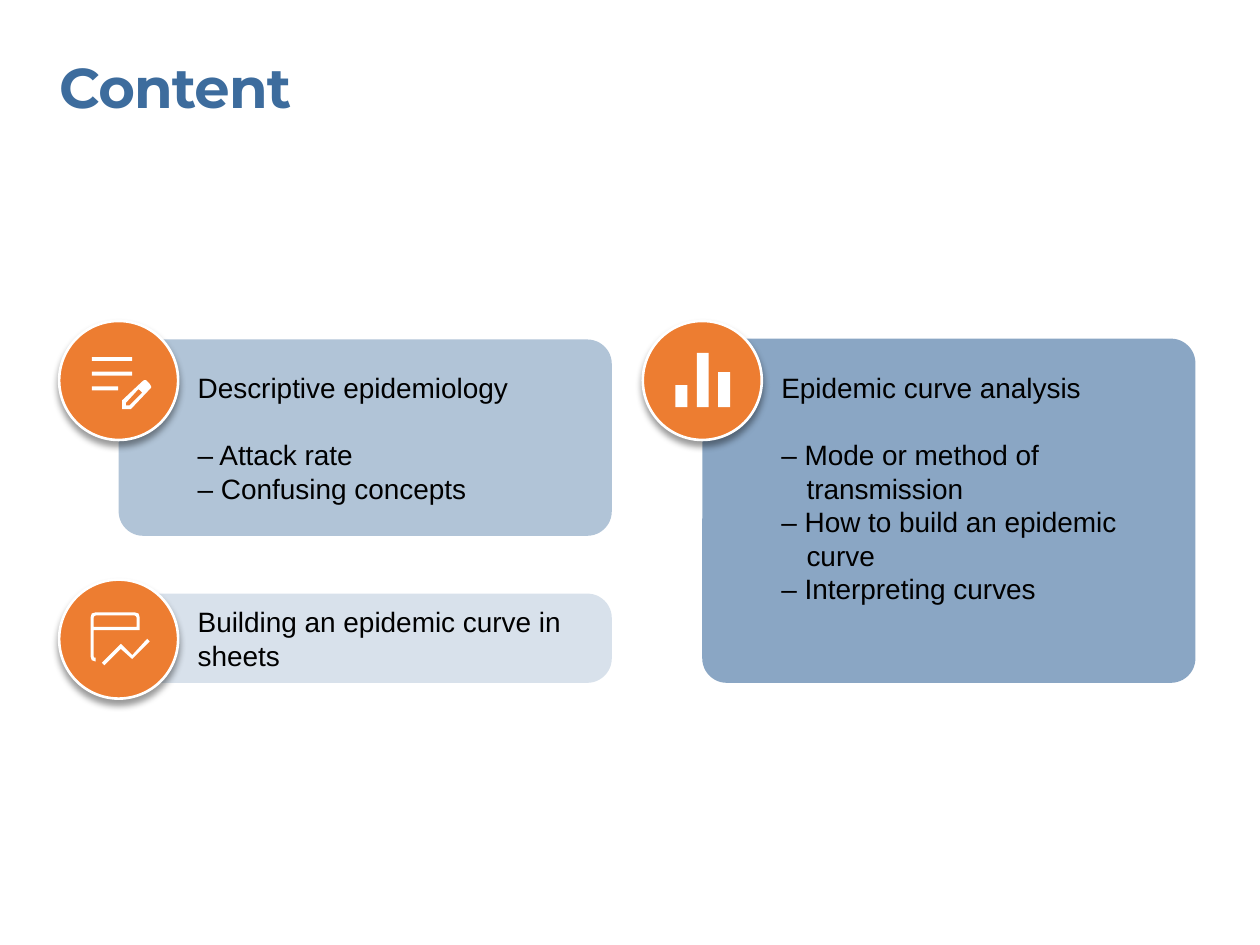
import dataclasses

import pptx
import pptx.dml.color
import pptx.enum.shapes
import pptx.enum.text
import pptx.oxml
import pptx.oxml.ns
import pptx.util

Pt = pptx.util.Pt
RGB = pptx.dml.color.RGBColor.from_string
SHAPES = pptx.enum.shapes.MSO_SHAPE


@dataclasses.dataclass(frozen=True)
class Theme:
    blue: str = "3D6C9D"
    orange: str = "ED7D31"
    white: str = "FFFFFF"
    black: str = "000000"
    heading_font: str = "Montserrat"
    body_font: str = "Arial"
    heading_size: float = 32
    body_size: float = 16


THEME = Theme()
BADGE_SIZE = 68
CARD_WIDTH = 281.8
CARD_RADIUS = 14
ICON_UNIT = 0.1
TOPICS_GAP = 19.2

CARDS = [
    dict(badge=(33.8, 183.4), top=194, height=112.2, opacity=40, icon="notes",
         text_top=211.7, text_height=77.8, heading="Descriptive epidemiology",
         topics=["Attack rate", "Confusing concepts"]),
    dict(badge=(33.8, 331.2), top=339.2, height=51, opacity=20, icon="trend",
         text_top=345.6, text_height=38.9,
         heading="Building an epidemic curve in sheets", topics=[]),
    dict(badge=(367.3, 183.4), top=193.5, height=196.7, opacity=60, icon="bars",
         text_top=211.7, text_height=135.4, heading="Epidemic curve analysis",
         topics=["Mode or method of transmission",
                 "How to build an epidemic curve", "Interpreting curves"]),
]


def box(left, top, right, bottom):
    return [(left, top), (right, top), (right, bottom), (left, bottom)]


ICONS = {
    "notes": [box(187, 206 + 84 * row, right, 228 + 84 * row)
              for row, right in enumerate((418, 418, 338))] + [
        [(360, 504), (360, 454), (475, 346), (486, 338), (497, 338), (504, 346),
         (518, 360), (526, 374), (526, 382), (518, 390), (410, 504)],
        [(382, 482), (403, 482), (475, 410), (454, 389), (382, 468)],
    ],
    "bars": [box(187 + 122 * column, top, 255 + 122 * column, 493)
             for column, top in enumerate((367, 182, 292))],
    "trend": [
        [(259, 490), (245, 475), (353, 367), (418, 432), (504, 338), (518, 353),
         (418, 454), (353, 396)],
        [(209, 468), (187, 461), (180, 439), (180, 216), (187, 194), (209, 187),
         (432, 187), (454, 194), (461, 216), (461, 288), (198, 288), (198, 439),
         (201, 446), (209, 446)],
        [(198, 270), (443, 270), (443, 216), (439, 209), (432, 205), (209, 205),
         (201, 209), (198, 216)],
    ],
}


def apply(target, formats):
    for attribute, value in formats.items():
        setattr(target, attribute, value)


def paint(shape, color):
    shape.shadow.inherit = False
    shape.fill.solid()
    shape.fill.fore_color.rgb = RGB(color)
    shape.line.fill.background()


def add_card(slide, left, top, height, opacity):
    card = slide.shapes.add_shape(
        SHAPES.ROUNDED_RECTANGLE, Pt(left), Pt(top), Pt(CARD_WIDTH), Pt(height))
    card.adjustments[0] = CARD_RADIUS / min(CARD_WIDTH, height)
    paint(card, THEME.blue)
    color = card.fill._xPr.find(".//" + pptx.oxml.ns.qn("a:srgbClr"))
    alpha = color.makeelement(pptx.oxml.ns.qn("a:alpha"), {"val": str(opacity * 1000)})
    color.append(alpha)


def add_badge(slide, left, top):
    badge = slide.shapes.add_shape(
        SHAPES.OVAL, Pt(left), Pt(top), Pt(BADGE_SIZE), Pt(BADGE_SIZE))
    paint(badge, THEME.orange)
    badge.line.color.rgb = RGB(THEME.white)
    badge.line.width = Pt(1.5)
    effects = badge._element.spPr.find(pptx.oxml.ns.qn("a:effectLst"))
    effects.append(pptx.oxml.parse_xml(
        f'<a:outerShdw {pptx.oxml.ns.nsdecls("a")} blurRad="{Pt(4)}" '
        f'dist="{Pt(3)}" dir="5400000" rotWithShape="0">'
        f'<a:srgbClr val="{THEME.black}"><a:alpha val="40000"/></a:srgbClr>'
        '</a:outerShdw>'))


def add_icon(slide, left, top, outlines):
    builder = slide.shapes.build_freeform(*outlines[0][0], scale=float(Pt(ICON_UNIT)))
    for outline in outlines:
        builder.move_to(*outline[0])
        builder.add_line_segments(outline[1:], close=True)
    paint(builder.convert_to_shape(Pt(left), Pt(top)), THEME.white)


def add_text(slide, left, top, width, height):
    frame = slide.shapes.add_textbox(Pt(left), Pt(top), Pt(width), Pt(height)).text_frame
    apply(frame, dict(margin_left=0, margin_top=0, margin_right=0, margin_bottom=0,
                      word_wrap=True,
                      auto_size=pptx.enum.text.MSO_AUTO_SIZE.SHAPE_TO_FIT_TEXT))
    return frame


def write(paragraph, text, color, **font):
    run = paragraph.add_run()
    run.text = text
    apply(run.font, font)
    run.font.color.rgb = RGB(color)
    return run


def add_title(slide, text):
    frame = add_text(slide, 33.8, 30.2, 615.6, 38.9)
    title = write(frame.paragraphs[0], text, THEME.blue, name=THEME.heading_font,
                  size=Pt(THEME.heading_size), bold=True)
    title.font._element.set("spc", "-50")


def add_outline(slide, left, top, width, height, heading, topics):
    frame = add_text(slide, left, top, width, height)
    body = dict(name=THEME.body_font, size=Pt(THEME.body_size))
    write(frame.paragraphs[0], heading, THEME.black, **body)
    for index, topic in enumerate(topics):
        entry = frame.add_paragraph()
        entry.space_before = Pt(0 if index else TOPICS_GAP)
        indents = dict(marL=Pt(14.4), indent=Pt(-14.4))
        for attribute, value in indents.items():
            entry._p.get_or_add_pPr().set(attribute, str(value))
        write(entry, f"– {topic}", THEME.black, **body)


def main():
    deck = pptx.Presentation()
    apply(deck, dict(slide_width=Pt(720), slide_height=Pt(540)))
    slide = deck.slides.add_slide(deck.slide_layouts[6])
    add_title(slide, "Content")
    for card in CARDS:
        left, top = card["badge"]
        add_card(slide, left + BADGE_SIZE / 2, card["top"], card["height"], card["opacity"])
        add_badge(slide, left, top)
        add_icon(slide, left, top, ICONS[card["icon"]])
        add_outline(slide, left + 79.2, card["text_top"], 216.5, card["text_height"],
                    card["heading"], card["topics"])
    deck.save("out.pptx")


if __name__ == "__main__":
    main()
